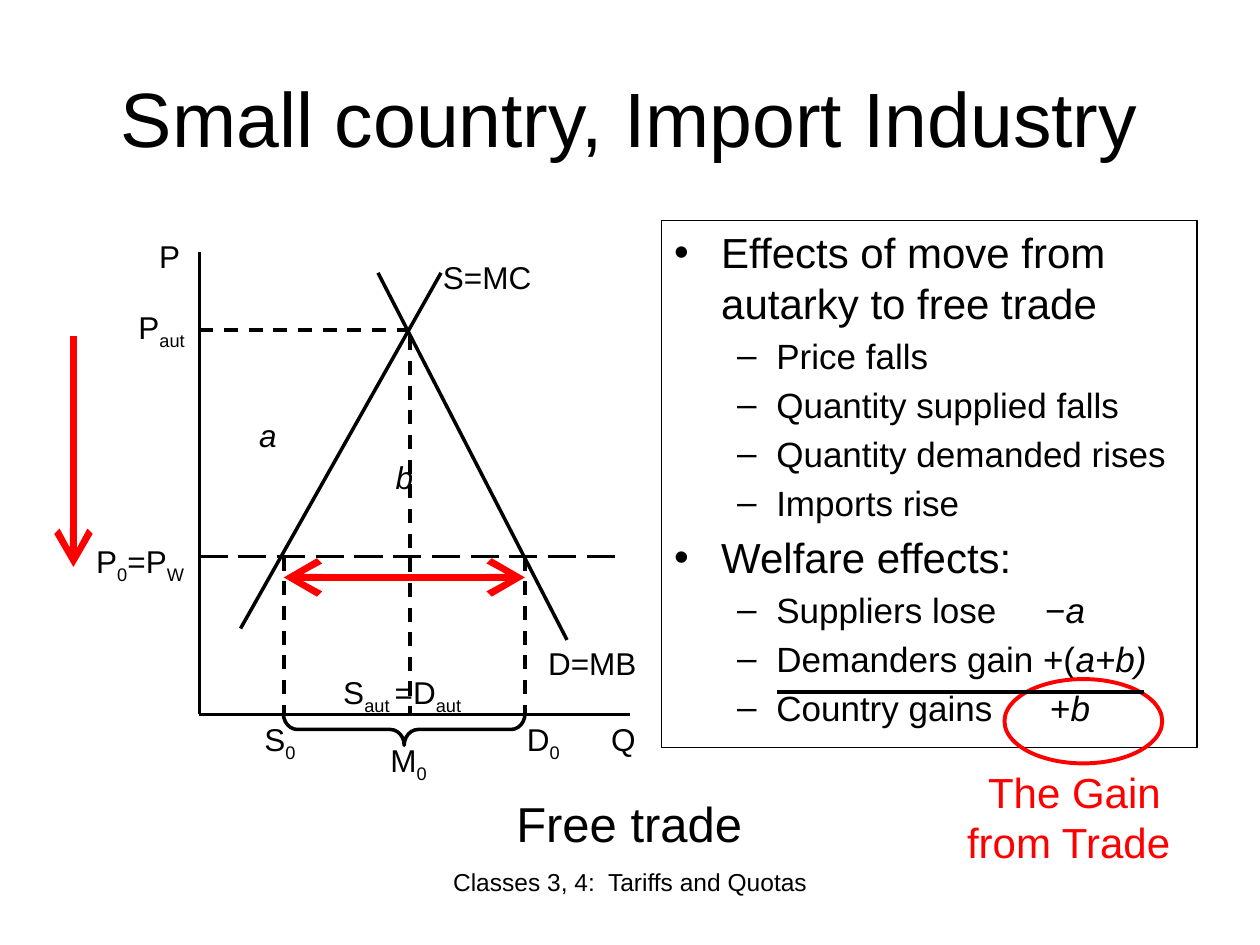
from lxml.etree import SubElement
from pptx import Presentation
from pptx.dml.color import RGBColor
from pptx.enum.dml import MSO_LINE as DASH
from pptx.enum.shapes import MSO_CONNECTOR, MSO_SHAPE as SHAPE
from pptx.enum.text import MSO_ANCHOR as ANCHOR, PP_ALIGN as ALIGN
from pptx.oxml.ns import qn
from pptx.util import Cm, Pt

BLACK, RED = "000000", "FF0000"


def add_text(p, text, size, color=BLACK):
    """Add runs to p: _x_ marks a subscript, *x* marks italics."""
    subscript = italic = False
    for part in text.replace("_", "|_|").replace("*", "|*|").split("|"):
        if part == "_":
            subscript = not subscript
        elif part == "*":
            italic = not italic
        elif part:
            r = p.add_run()
            r.text = part
            r.font.name, r.font.size = "Arial", Pt(size)
            r.font.italic = italic
            r.font.color.rgb = RGBColor.from_string(color)
            if subscript:
                r.font._element.set("baseline", "-25000")


def style_line(line, color, width):
    line.color.rgb = RGBColor.from_string(color)
    line.width = Pt(width)


prs = Presentation()
prs.slide_width, prs.slide_height = Cm(25.4), Cm(19.05)
s = prs.slides.add_slide(prs.slide_layouts[6])

# Key positions in the diagram, in cm
axis_x, axis_y = 4.02, 14.4
s0, aut, d0 = 5.72, 8.26, 10.58
p_aut, p_w = 6.65, 11.22
imports_y = 11.64

# Outlined shapes: kind, left, top, width, height, color, line width
outlines = [
    (SHAPE.LEFT_BRACE, 7.83, 12.27, 0.64, 4.87, BLACK, 2),
    (SHAPE.RECTANGLE, 13.34, 4.45, 10.79, 10.62, BLACK, 0.75),
    (SHAPE.OVAL, 20.25, 13.69, 3.18, 1.7, RED, 2.25),
]
shapes = []
for kind, x, y, w, h, color, width in outlines:
    sp = s.shapes.add_shape(kind, Cm(x), Cm(y), Cm(w), Cm(h))
    sp.shadow.inherit = False
    sp.fill.background()
    style_line(sp.line, color, width)
    shapes.append(sp)
brace, effects_box, gain_ring = shapes
brace.rotation = 270
brace.adjustments[0] = 0.44

# Lines: start, end, color, width, dash, arrowhead
lines = [
    (axis_x, axis_y, 12.7, axis_y, BLACK, 2, None, False),
    (axis_x, axis_y, axis_x, 5.08, BLACK, 2, None, False),
    (11.43, 12.9, 7.62, 5.5, BLACK, 2, None, False),
    (4.85, 12.67, 8.89, 5.5, BLACK, 2, None, False),
    (axis_x, p_aut, aut, p_aut, BLACK, 2, DASH.DASH, False),
    (axis_x, p_w, 12.5, p_w, BLACK, 2, DASH.LONG_DASH, False),
    (d0, p_w, d0, axis_y, BLACK, 2, DASH.DASH, False),
    (s0, p_w, s0, axis_y, BLACK, 2, DASH.DASH, False),
    (aut, 6.78, aut, axis_y, BLACK, 2, DASH.DASH, False),
    (15.67, 13.95, 23.07, 13.95, BLACK, 2, None, False),
    (1.48, 6.78, 1.48, 11.43, RED, 4, None, True),
    (aut, imports_y, s0, imports_y, RED, 4, None, True),
    (aut, imports_y, d0, imports_y, RED, 4, None, True),
]
for x1, y1, x2, y2, color, width, dash, arrow in lines:
    c = s.shapes.add_connector(MSO_CONNECTOR.STRAIGHT, Cm(x1), Cm(y1), Cm(x2), Cm(y2))
    style_line(c.line, color, width)
    if dash:
        c.line.dash_style = dash
    if arrow:
        SubElement(c.line._get_or_add_ln(), qn("a:tailEnd"), type="arrow", w="lg", len="lg")
    SubElement(c._element.spPr, qn("a:effectLst"))

# Text boxes: text, left, top, width, height, size, alignment, color
labels = [
    ("Small country, Import Industry", 1.27, 0.76, 22.86, 3.18, 44, ALIGN.CENTER, BLACK),
    ("P", 2.96, 4.66, 1.9, 1.02, 18, ALIGN.LEFT, BLACK),
    ("P_aut_", 2.54, 6.08, 1.9, 1.02, 18, ALIGN.LEFT, BLACK),
    ("P_0_=P_W_", 1.69, 10.8, 2.54, 1.02, 18, ALIGN.LEFT, BLACK),
    ("Q", 12.07, 14.4, 1.9, 1.02, 18, ALIGN.LEFT, BLACK),
    ("S_0_", 5.08, 14.4, 1.27, 1.02, 18, ALIGN.LEFT, BLACK),
    ("D_0_", 10.37, 14.4, 1.27, 1.02, 18, ALIGN.LEFT, BLACK),
    ("M_0_", 7.62, 14.82, 1.8, 1.02, 18, ALIGN.LEFT, BLACK),
    ("S_aut _=D_aut_", 6.67, 13.44, 3.6, 1.02, 18, ALIGN.LEFT, BLACK),
    ("S=MC", 8.68, 5.08, 2.56, 1.02, 18, ALIGN.LEFT, BLACK),
    ("D=MB", 10.8, 12.86, 3.6, 1.02, 18, ALIGN.LEFT, BLACK),
    ("*a*", 4.45, 8.26, 1.9, 1.02, 18, ALIGN.CENTER, BLACK),
    ("*b*", 7.2, 9.1, 1.9, 1.02, 18, ALIGN.CENTER, BLACK),
    ("Free trade", 10.16, 15.88, 5.1, 1.45, 28, ALIGN.LEFT, BLACK),
    ("Classes 3, 4:  Tariffs and Quotas", 8.68, 17.35, 8.05, 1.32, 14, ALIGN.CENTER, BLACK),
    ("The Gain from Trade ", 18.8, 15.32, 5.72, 2.31, 24, ALIGN.CENTER, RED),
]
for text, x, y, w, h, size, align, color in labels:
    tf = s.shapes.add_textbox(Cm(x), Cm(y), Cm(w), Cm(h)).text_frame
    tf.word_wrap = True
    tf.vertical_anchor = ANCHOR.MIDDLE if size == 44 else ANCHOR.TOP
    p = tf.paragraphs[0]
    p.alignment = align
    add_text(p, text, size, color)

# Effects list: level, text, tab stop in cm
effects = [
    (0, "Effects of move from autarky to free trade", None),
    (1, "Price falls", None),
    (1, "Quantity supplied falls", None),
    (1, "Quantity demanded rises", None),
    (1, "Imports rise", None),
    (0, "Welfare effects:", None),
    (1, "Suppliers lose\t−*a*", 7.48),
    (1, "Demanders gain +(*a+b)*", None),
    (1, "Country gains\t+*b*", 7.58),
]
# Per level: font size, space before, left margin, hanging indent, bullet
levels = [(24, 4.8, 0.95, 0.95, "•"), (20, 3.9, 2.06, 0.79, "–")]
tf = effects_box.text_frame
tf.word_wrap = True
tf.vertical_anchor = ANCHOR.TOP
for i, (level, text, tab) in enumerate(effects):
    size, space, margin, hang, bullet = levels[level]
    p = tf.add_paragraph() if i else tf.paragraphs[0]
    p.alignment, p.level = ALIGN.LEFT, level
    p.space_before = Pt(space if i else 0)
    pPr = p._p.get_or_add_pPr()
    pPr.set("marL", str(Cm(margin)))
    pPr.set("indent", str(-Cm(hang)))
    SubElement(pPr, qn("a:buFont"), typeface="Arial")
    SubElement(pPr, qn("a:buChar"), char=bullet)
    if tab:
        tabs = SubElement(pPr, qn("a:tabLst"))
        SubElement(tabs, qn("a:tab"), pos=str(Cm(tab)), algn="l")
    add_text(p, text, size)

prs.save("out.pptx")
